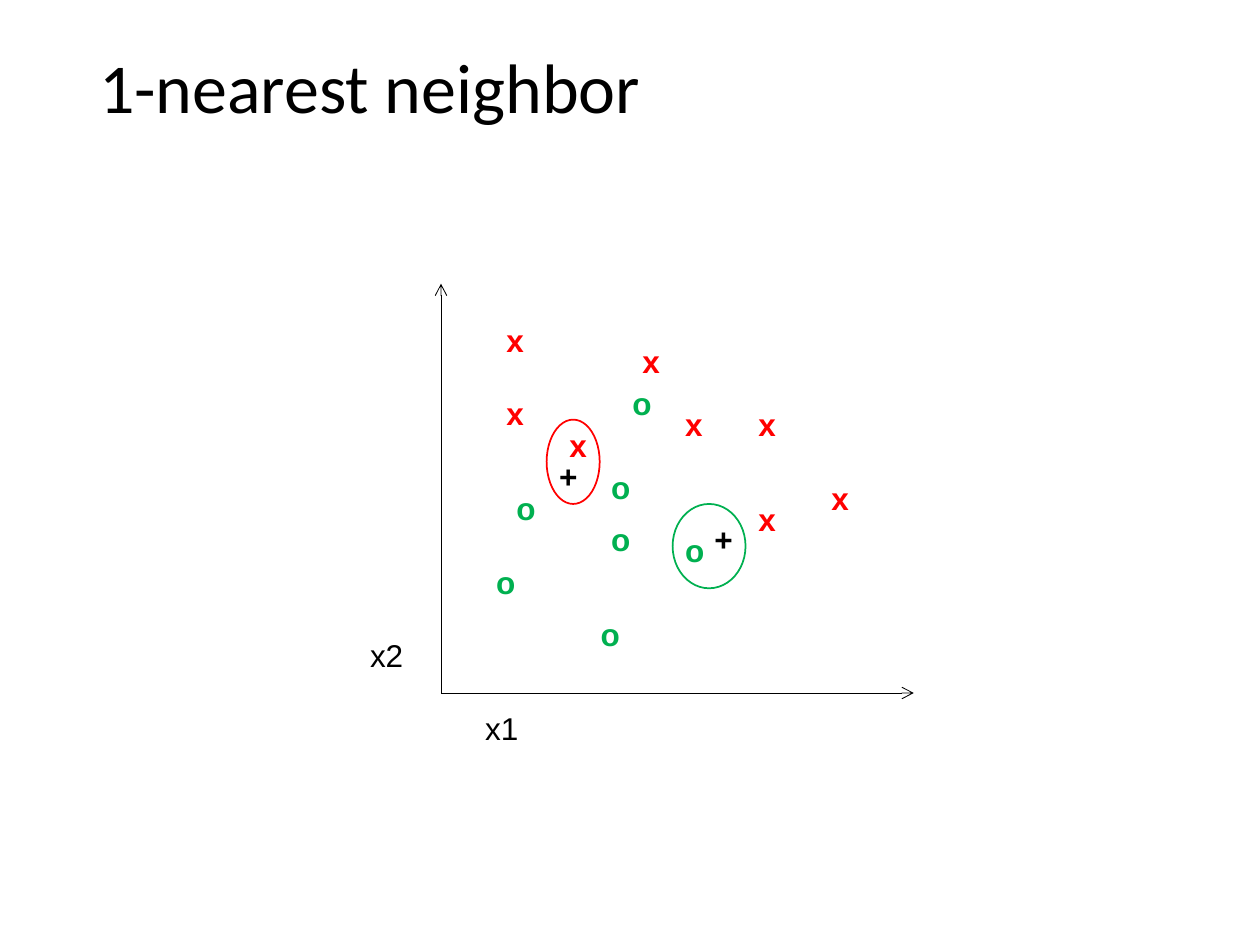
from pptx import Presentation
from pptx.dml.color import RGBColor
from pptx.enum.shapes import MSO_CONNECTOR, MSO_SHAPE
from pptx.enum.text import MSO_ANCHOR, MSO_AUTO_SIZE
from pptx.oxml.ns import qn
from pptx.util import Cm, Pt
from lxml import etree

BLACK = RGBColor(0x00, 0x00, 0x00)
RED = RGBColor(0xFF, 0x00, 0x00)
GREEN = RGBColor(0x00, 0xB0, 0x50)
STRAIGHT = MSO_CONNECTOR.STRAIGHT
OVAL = MSO_SHAPE.OVAL
MIDDLE = MSO_ANCHOR.MIDDLE
TOP = MSO_ANCHOR.TOP
FIT_SHAPE = MSO_AUTO_SIZE.SHAPE_TO_FIT_TEXT
NO_FIT = MSO_AUTO_SIZE.NONE

LABEL_HEIGHT = 1.02
ORIGIN = (8.89, 13.97)
AXIS_ENDS = [(8.89, 5.72), (18.42, 13.97)]
CROSSES = [(13.56, 8.05), (15.04, 8.05), (15.04, 9.96), (16.51, 9.53),
           (9.96, 6.35), (9.96, 7.82), (12.7, 6.78), (11.23, 8.46)]
CIRCLES = [(12.5, 7.62), (13.56, 10.59), (9.75, 11.23), (10.16, 9.73),
           (11.86, 12.27), (12.07, 10.36), (12.07, 9.32)]
QUERIES = [(11.02, 9.09), (14.15, 10.36)]
POINT_SETS = [("x", RED, 0.86, CROSSES), ("o", GREEN, 0.91, CIRCLES),
              ("+", BLACK, 0.89, QUERIES)]
AXIS_NAMES = [("x2", 7.21, 12.7), ("x1", 9.53, 14.17)]
NEIGHBORHOODS = [(11.02, 8.46, 1.07, RED), (13.56, 10.16, 1.47, GREEN)]


def write(frame, text, *, font, size, color, bold=False, spacing=1.0):
    para = frame.paragraphs[0]
    para.line_spacing = spacing
    span = para.add_run()
    span.text = text
    span.font.name = font
    span.font.size = Pt(size)
    span.font.bold = bold
    span.font.color.rgb = color


class Painter:
    """Draws styled elements on the current slide."""

    title_font = "Calibri"
    label_font = "Arial"

    def __init__(self, page):
        self.page = page

    def text_box(self, left, top, width, height, *, wrap, anchor, fit):
        box = self.page.shapes.add_textbox(Cm(left), Cm(top), Cm(width), Cm(height))
        frame = box.text_frame
        frame.word_wrap = wrap
        frame.auto_size = fit
        frame.vertical_anchor = anchor
        return frame

    def title(self, text):
        frame = self.text_box(1.75, 0, 21.9, 3.68, wrap=True, anchor=MIDDLE, fit=NO_FIT)
        write(frame, text, font=self.title_font, size=40, color=BLACK, spacing=0.9)

    def label(self, text, left, top, width, color=BLACK, bold=False):
        frame = self.text_box(left, top, width, LABEL_HEIGHT,
                              wrap=False, anchor=TOP, fit=FIT_SHAPE)
        write(frame, text, font=self.label_font, size=18, color=color, bold=bold)

    def axis(self, start, end):
        line = self.page.shapes.add_connector(STRAIGHT, *map(Cm, start + end))
        line.line.color.rgb = BLACK
        line.line.width = Pt(0.5)
        etree.SubElement(line.line._get_or_add_ln(), qn("a:tailEnd"), type="arrow")
        etree.SubElement(line._element.spPr, qn("a:effectLst"))

    def ring(self, left, top, width, height, color):
        oval = self.page.shapes.add_shape(OVAL, Cm(left), Cm(top), Cm(width), Cm(height))
        oval.shadow.inherit = False
        oval.fill.background()
        oval.line.color.rgb = color
        oval.line.width = Pt(1)


def main():
    deck = Presentation()
    deck.slide_width, deck.slide_height = Cm(25.4), Cm(19.05)
    painter = Painter(deck.slides.add_slide(deck.slide_layouts[6]))

    painter.title("1-nearest neighbor")
    for end in AXIS_ENDS:
        painter.axis(ORIGIN, end)
    for name, left, top in AXIS_NAMES:
        painter.label(name, left, top, 1.19)
    for mark, color, width, points in POINT_SETS:
        for left, top in points:
            painter.label(mark, left, top, width, color, bold=True)
    for left, top, width, color in NEIGHBORHOODS:
        painter.ring(left, top, width, 1.7, color)

    deck.save("out.pptx")


if __name__ == "__main__":
    main()
